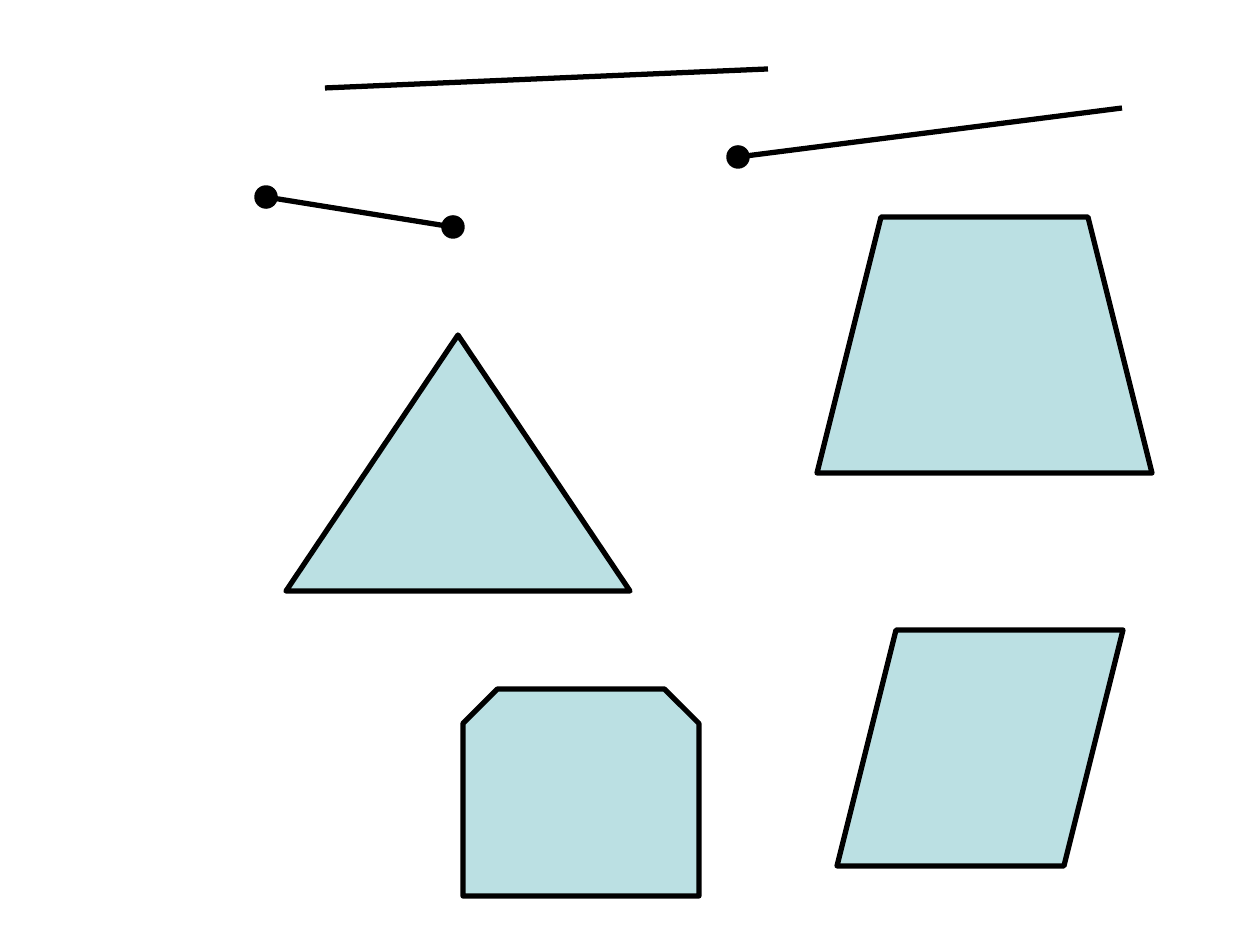
from lxml import etree
from pptx import Presentation
from pptx.dml.color import RGBColor
from pptx.enum.shapes import MSO_CONNECTOR, MSO_SHAPE
from pptx.oxml.ns import qn
from pptx.util import Emu, Pt

STRAIGHT = MSO_CONNECTOR.STRAIGHT
OVAL = MSO_SHAPE.OVAL
TRAPEZOID = MSO_SHAPE.TRAPEZOID
TRIANGLE = MSO_SHAPE.ISOSCELES_TRIANGLE
SNIPPED = MSO_SHAPE.SNIP_2_SAME_RECTANGLE
PARALLELOGRAM = MSO_SHAPE.PARALLELOGRAM

COLORS = {"ink": "000000", "fill": "BBE0E3", "background": "FFFFFF"}
PX_PER_INCH = 126
DOT_SIZE = 20

SEGMENTS = [
    ((325, 88), (768, 69), []),
    ((738, 157), (1122, 108), ["start"]),
    ((266, 197), (453, 227), ["end", "start"]),
]
POLYGONS = [
    (TRAPEZOID, (817, 217, 335, 256)),
    (TRIANGLE, (286, 335, 344, 256)),
    (SNIPPED, (463, 689, 236, 207)),
    (PARALLELOGRAM, (837, 630, 286, 236)),
]


def px(length):
    return Emu(round(length * 914400 / PX_PER_INCH))


def color(name):
    return RGBColor.from_string(COLORS[name])


def style_line(line, width):
    line.color.rgb = color("ink")
    line.width = Pt(width)


def add_figure(slide, kind, box, fill, width):
    shape = slide.shapes.add_shape(kind, *map(px, box))
    shape.shadow.inherit = False
    shape.fill.solid()
    shape.fill.fore_color.rgb = color(fill)
    style_line(shape.line, width)
    outline = shape.element.spPr.find(qn("a:ln"))
    etree.SubElement(outline, qn("a:round"))


def add_segment(slide, start, end, dots):
    connector = slide.shapes.add_connector(STRAIGHT, *map(px, start + end))
    style_line(connector.line, 3)
    etree.SubElement(connector.element.spPr, qn("a:effectLst"))
    points = {"start": start, "end": end}
    for dot in dots:
        left, top = (center - DOT_SIZE / 2 for center in points[dot])
        add_figure(slide, OVAL, (left, top, DOT_SIZE, DOT_SIZE), "ink", 2)


def main():
    presentation = Presentation()
    presentation.slide_width = px(1260)
    presentation.slide_height = px(945)
    slide = presentation.slides.add_slide(presentation.slide_layouts[6])
    slide.background.fill.solid()
    slide.background.fill.fore_color.rgb = color("background")
    for start, end, dots in SEGMENTS:
        add_segment(slide, start, end, dots)
    for kind, box in POLYGONS:
        add_figure(slide, kind, box, "fill", 3)
    presentation.save("out.pptx")


if __name__ == "__main__":
    main()
